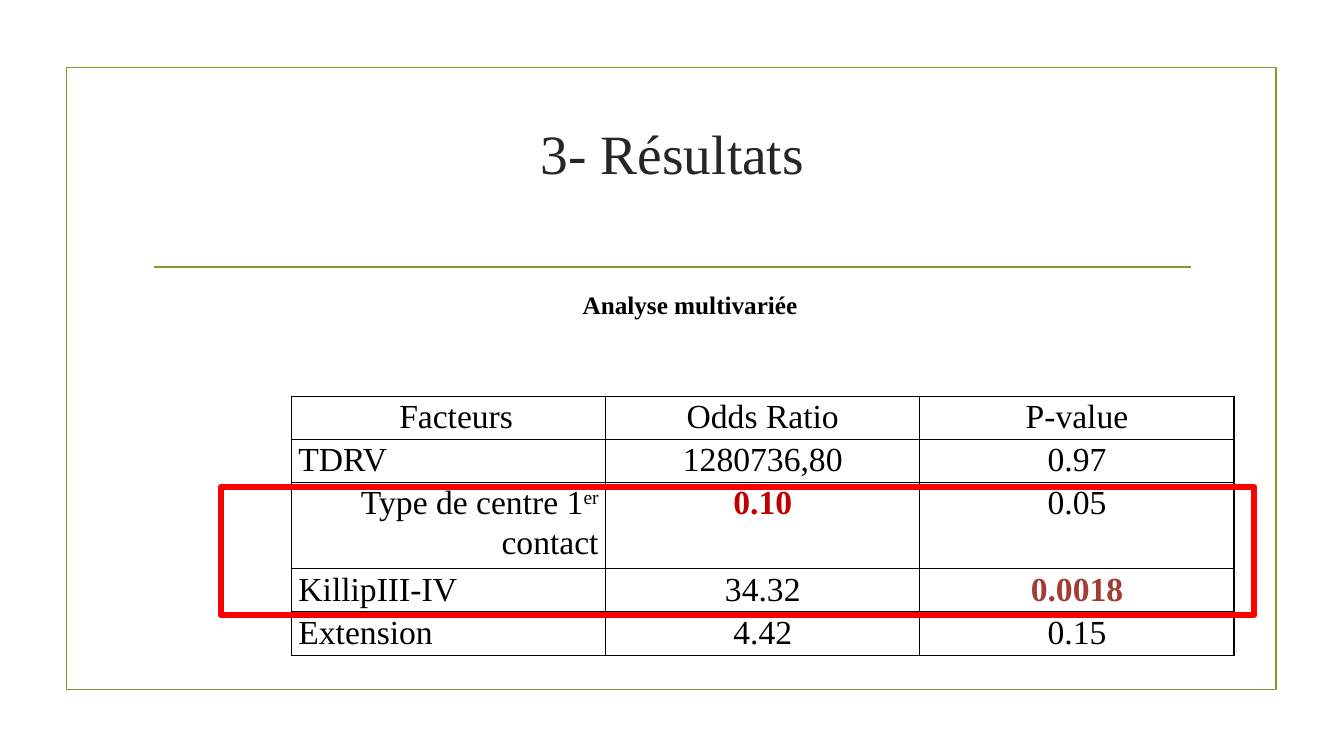
from dataclasses import dataclass

from lxml.etree import SubElement as Sub
from pptx import Presentation
from pptx.dml.color import RGBColor as Rgb
from pptx.enum.shapes import MSO_CONNECTOR as Conn, MSO_SHAPE as Shape
from pptx.enum.text import MSO_ANCHOR as Anchor, PP_ALIGN as Align
from pptx.oxml.ns import qn
from pptx.util import Inches, Pt


@dataclass(frozen=True)
class Theme:
    font: str = "Times New Roman"
    green: str = "83992A"
    black: str = "000000"
    gray: str = "262626"
    red: str = "FF0000"
    dark: str = "C00000"
    brick: str = "A23C33"
    title: float = 39.6
    body: float = 24
    label: float = 18


class Deck:
    def __init__(self, theme):
        self.theme = theme
        self.show = Presentation()
        self.show.slide_width = Inches(13.33)
        self.show.slide_height = Inches(7.5)
        self.slide = self.show.slides.add_slide(self.show.slide_layouts[6])

    def style(self, para, size, color, bold=False):
        for run in para.runs:
            font = run.font
            font.name, font.size, font.bold = self.theme.font, Pt(size), bold
            font.color.rgb = Rgb.from_string(color)

    def frame(self, x, y, w, h, color, width):
        box = self.slide.shapes.add_shape(
            Shape.RECTANGLE, Inches(x), Inches(y), Inches(w), Inches(h))
        box.shadow.inherit = False
        box.fill.background()
        box.line.color.rgb = Rgb.from_string(color)
        box.line.width = Pt(width)
        Sub(box.line._get_or_add_ln(), qn("a:round"))

    def rule(self, x, end, y, color, width):
        line = self.slide.shapes.add_connector(
            Conn.STRAIGHT, Inches(x), Inches(y), Inches(end), Inches(y))
        line.line.color.rgb = Rgb.from_string(color)
        line.line.width = Pt(width)
        Sub(line._element.spPr, qn("a:effectLst"))

    def text(self, words, x, y, w, h, size, color, bold=False,
             align=Align.LEFT, anchor=Anchor.TOP, foot=0.05):
        box = self.slide.shapes.add_textbox(
            Inches(x), Inches(y), Inches(w), Inches(h))
        body = box.text_frame
        body.word_wrap = True
        body.vertical_anchor = anchor
        body.margin_bottom = Inches(foot)
        body.text = words
        para = body.paragraphs[0]
        para.alignment = align
        self.style(para, size, color, bold)

    def edges(self, cell):
        props = cell._tc.get_or_add_tcPr()
        for side in ("lnL", "lnR", "lnT", "lnB"):
            edge = Sub(props, qn(f"a:{side}"), w=str(Pt(1)))
            fill = Sub(edge, qn("a:solidFill"))
            Sub(fill, qn("a:srgbClr"), val=self.theme.black)

    def cell(self, cell, parts, align, color, inset):
        cell.margin_left, cell.margin_right = Inches(inset), Inches(0.07)
        cell.margin_top = cell.margin_bottom = 0
        self.edges(cell)
        cell.fill.background()
        para = cell.text_frame.paragraphs[0]
        for part in parts:
            para.add_run().text = part
        para.alignment = align
        para.line_spacing = 1.07
        self.style(para, self.theme.body, color or self.theme.black, bool(color))
        # The second part of a split text is raised
        for run in para.runs[1:2]:
            run.font._element.set("baseline", "30000")

    def table(self, rows, x, y, w, highs, aligns, tints, insets):
        grid = self.slide.shapes.add_table(
            len(rows), len(rows[0]), Inches(x), Inches(y),
            Inches(w), Inches(sum(highs))).table
        grid.first_row = grid.horz_banding = False
        for r, row in enumerate(rows):
            grid.rows[r].height = Inches(highs[r])
            for c, item in enumerate(row):
                parts = (item,) if isinstance(item, str) else item
                spot = (r, c)
                self.cell(grid.cell(r, c), parts,
                          aligns.get(spot, Align.CENTER if c else Align.LEFT),
                          tints.get(spot), insets.get(spot, 0.07))


def main():
    theme = Theme()
    deck = Deck(theme)

    # Page border and title
    deck.frame(0.66, 0.67, 12, 6.17, theme.green, 1.25)
    deck.rule(1.53, 11.81, 2.65, theme.green, 1.25)
    deck.text("3- Résultats", 1.42, 1.07, 10.5, 1.43, theme.title, theme.gray,
              align=Align.CENTER, anchor=Anchor.MIDDLE, foot=0.6)

    # Results table
    deck.text("Analyse multivariée", 5.68, 2.82, 2.42, 0.4,
              theme.label, theme.black, bold=True)
    rows = [
        ("Facteurs", "Odds Ratio", "P-value"),
        ("TDRV", "1280736,80", "0.97"),
        (("Type de centre 1", "er", " contact"), "0.10", "0.05"),
        ("KillipIII-IV", "34.32", "0.0018"),
        ("Extension", "4.42", "0.15"),
    ]
    deck.table(rows, 2.89, 3.93, 9.35, [0.38, 0.38, 0.75, 0.38, 0.38],
               aligns={(2, 0): Align.RIGHT},
               tints={(2, 1): theme.dark, (3, 2): theme.brick},
               insets={(0, 0): 1.07})

    # Highlight around the key rows
    deck.frame(2.19, 4.83, 10.25, 1.27, theme.red, 4.5)

    deck.show.save("out.pptx")


if __name__ == "__main__":
    main()
